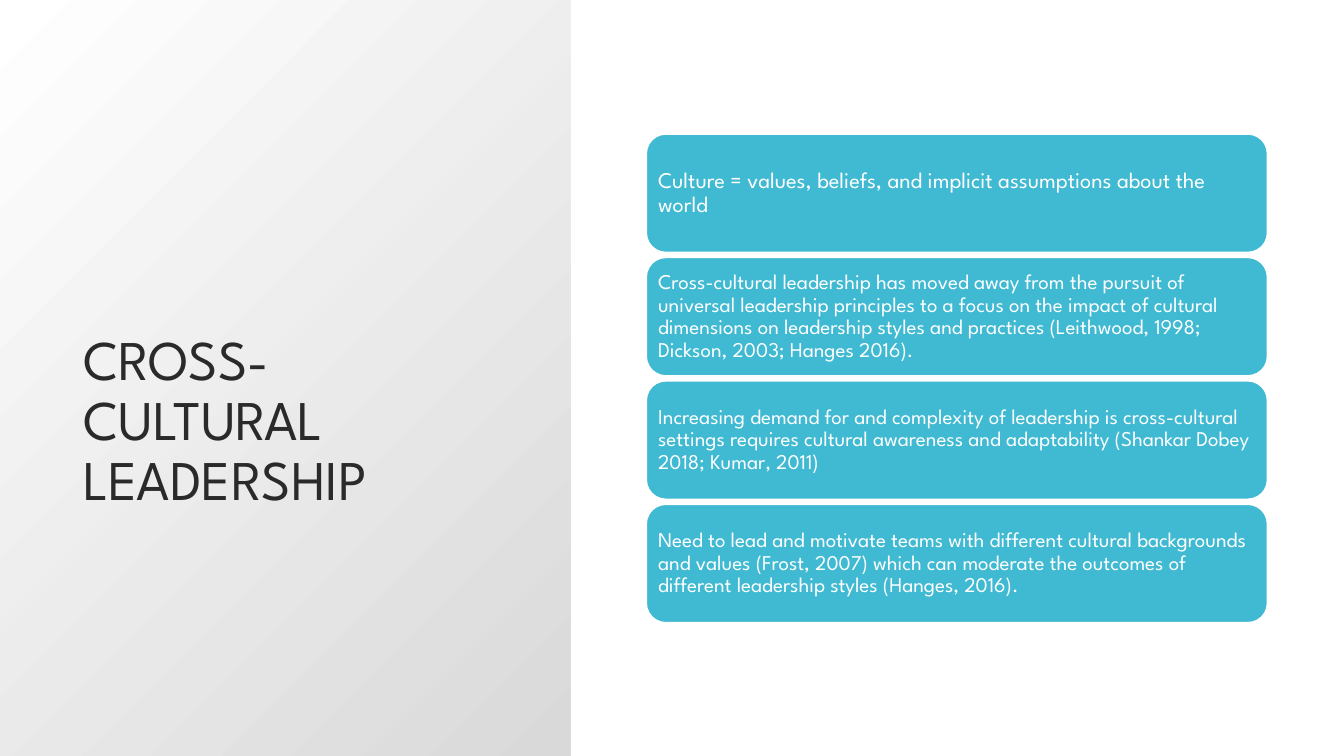
from dataclasses import dataclass

from pptx import Presentation
from pptx.dml.color import RGBColor as Rgb
from pptx.enum import shapes as es, text as et
from pptx.util import Cm, Pt


@dataclass(frozen=True)
class Theme:
    font: str = "League Spartan"
    ink: Rgb = Rgb(0x2A, 0x2A, 0x2A)
    white: Rgb = Rgb(0xFF, 0xFF, 0xFF)
    grey: Rgb = Rgb(0xD9, 0xD9, 0xD9)
    teal: Rgb = Rgb(0x40, 0xBA, 0xD2)
    head: int = 40
    lead: int = 16
    body: int = 15


THEME = Theme()
TITLE = "CROSS-CULTURAL LEADERSHIP"
POINTS = [
    "Culture = values, beliefs, and implicit assumptions about the world",
    "Cross-cultural leadership has moved away from the pursuit of universal "
    "leadership principles to a focus on the impact of cultural dimensions on "
    "leadership styles and practices (Leithwood, 1998; Dickson, 2003; Hanges 2016).",
    "Increasing demand for and complexity of leadership is cross-cultural settings "
    "requires cultural awareness and adaptability (Shankar Dobey 2018; Kumar, 2011)",
    "Need to lead and motivate teams with different cultural backgrounds and values "
    "(Frost, 2007) which can moderate the outcomes of different leadership styles "
    "(Hanges, 2016).",
]


def apply(item, values):
    for name, value in values.items():
        setattr(item, name, value)


def write(shape, words, size, color, anchor, inset):
    """Fill a shape with one left-aligned paragraph."""
    frame = shape.text_frame
    frame.text = words
    apply(frame, {"word_wrap": True, "auto_size": et.MSO_AUTO_SIZE.NONE,
                  "vertical_anchor": anchor})
    apply(frame, {f"margin_{side}": Cm(inset)
                  for side in ("left", "right", "top", "bottom")})
    para = frame.paragraphs[0]
    apply(para, {"alignment": et.PP_ALIGN.LEFT, "line_spacing": 0.9})
    apply(para.runs[0].font, {"name": THEME.font, "size": Pt(size), "bold": False})
    para.runs[0].font.color.rgb = color


def add_panel(slide, left, top, width, height):
    """Place the shaded panel behind the title."""
    panel = slide.shapes.add_shape(es.MSO_SHAPE.RECTANGLE, Cm(left), Cm(top),
                                   Cm(width), Cm(height))
    panel.shadow.inherit = False
    panel.line.fill.background()
    panel.fill.gradient()
    panel.fill.gradient_angle = 315
    for stop, color in zip(panel.fill.gradient_stops, (THEME.white, THEME.grey)):
        stop.color.rgb = color

    title = slide.shapes.title
    title.element.addprevious(panel.element)
    apply(title, {"left": Cm(left + 1.9), "top": Cm(top + 1.9),
                  "width": Cm(width - 3.58), "height": Cm(height - 7.82)})
    write(title, TITLE, THEME.head, THEME.ink, et.MSO_ANCHOR.BOTTOM, 0.2)


def add_cards(slide, left, top, width, height, gap=0.11):
    """Stack one rounded card per point, evenly over the box."""
    count = len(POINTS)
    tall = (height - gap * (count - 1)) / count
    for row, words in enumerate(POINTS):
        card = slide.shapes.add_shape(
            es.MSO_SHAPE.ROUNDED_RECTANGLE, Cm(left),
            Cm(top + row * (tall + gap)), Cm(width), Cm(tall))
        card.shadow.inherit = False
        card.fill.solid()
        card.fill.fore_color.rgb = THEME.teal
        card.line.color.rgb = THEME.white
        card.line.width = Pt(1.5)
        size = THEME.body if row else THEME.lead
        write(card, words, size, THEME.white, et.MSO_ANCHOR.MIDDLE, 0.16)


def main():
    deck = Presentation()
    apply(deck, {"slide_width": Cm(33.87), "slide_height": Cm(19.05)})
    slide = deck.slides.add_slide(deck.slide_layouts.get_by_name("Title Only"))
    add_panel(slide, 0, 0, 14.38, 19.05)
    add_cards(slide, 16.28, 3.37, 15.67, 12.33)
    deck.save("out.pptx")


if __name__ == "__main__":
    main()
